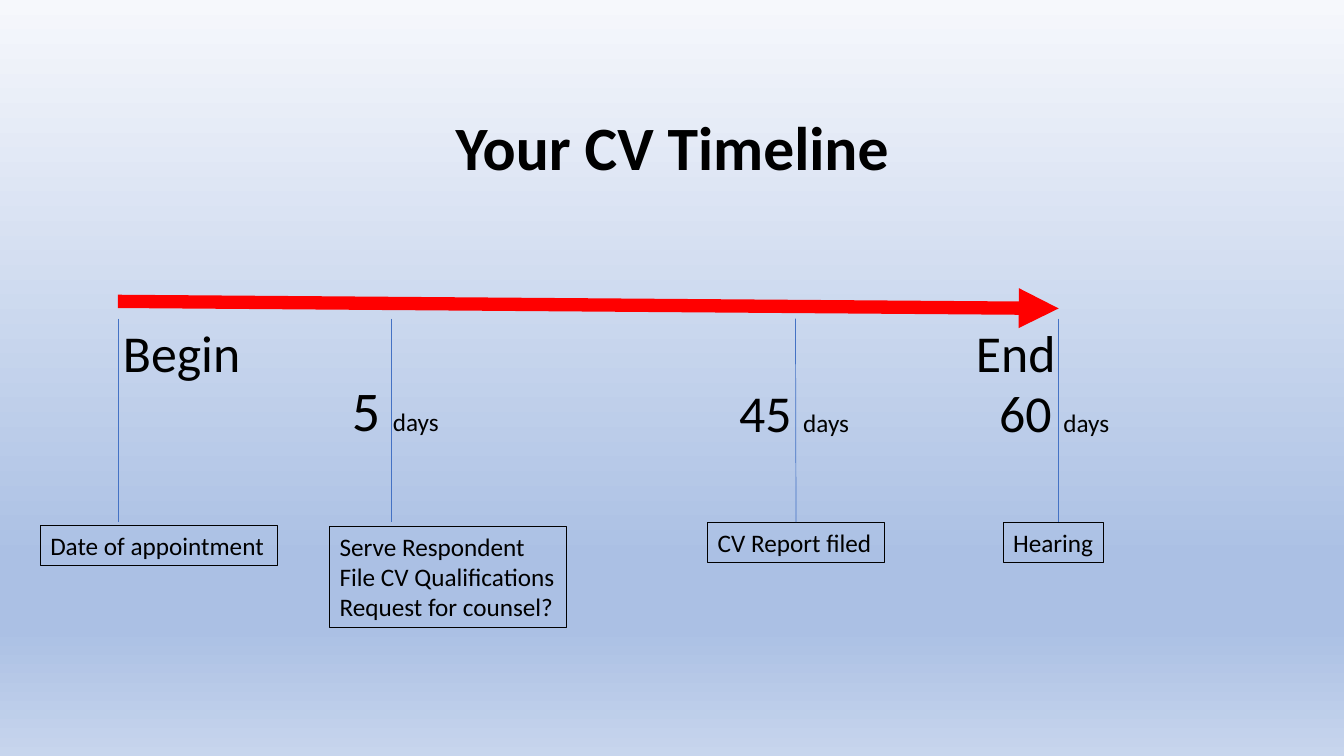
from lxml.etree import SubElement
from pptx import Presentation
from pptx.dml.color import RGBColor
from pptx.enum.shapes import MSO_CONNECTOR, MSO_SHAPE
from pptx.enum.text import MSO_ANCHOR, MSO_AUTO_SIZE, PP_ALIGN
from pptx.oxml import parse_xml
from pptx.oxml.ns import nsdecls, qn
from pptx.util import Inches, Pt

BLACK = RGBColor(0x00, 0x00, 0x00)
RED = RGBColor(0xFF, 0x00, 0x00)
BLUE = RGBColor(0x44, 0x72, 0xC4)
SKY_STOPS = [
    (0, RGBColor(0xF6, 0xF8, 0xFC)),
    (74, RGBColor(0xAB, 0xC0, 0xE4)),
    (83, RGBColor(0xAB, 0xC0, 0xE4)),
    (100, RGBColor(0xC7, 0xD5, 0xED)),
]

presentation = Presentation()
presentation.slide_width = Inches(13.33)
presentation.slide_height = Inches(7.5)
slide = presentation.slides.add_slide(presentation.slide_layouts[6])

background = slide.background.fill
background.gradient()
background.gradient_angle = 270
stop_list = slide.background._cSld.find(".//" + qn("a:gsLst"))
for stop in list(stop_list):
    stop_list.remove(stop)
for position, color in SKY_STOPS:
    stop_list.append(parse_xml(
        f'<a:gs {nsdecls("a")} pos="{position * 1000}">'
        f'<a:srgbClr val="{color}"/></a:gs>'))


def add_text(lines, left, top, width, height, bold=False, align=PP_ALIGN.LEFT,
             anchor=MSO_ANCHOR.BOTTOM, margin=0, outlined=False):
    shape = slide.shapes.add_shape(
        MSO_SHAPE.RECTANGLE, Inches(left), Inches(top), Inches(width), Inches(height))
    shape.shadow.inherit = False
    shape.fill.background()
    if outlined:
        shape.line.color.rgb = BLACK
        shape.line.width = Pt(0.75)
    else:
        shape.line.fill.background()
    frame = shape.text_frame
    frame.word_wrap = False
    if outlined:
        frame.auto_size = MSO_AUTO_SIZE.SHAPE_TO_FIT_TEXT
    frame.vertical_anchor = anchor
    frame.margin_left = frame.margin_right = Inches(margin)
    frame.margin_top = frame.margin_bottom = Inches(margin / 2)
    for index, runs in enumerate(lines):
        paragraph = frame.add_paragraph() if index else frame.paragraphs[0]
        paragraph.alignment = align
        for text, size in runs:
            run = paragraph.add_run()
            run.text = text
            run.font.name = "Calibri"
            run.font.size = Pt(size)
            run.font.bold = bold
            run.font.color.rgb = BLACK
    return shape


def add_line(start, end, color, width):
    line = slide.shapes.add_connector(
        MSO_CONNECTOR.STRAIGHT, *[Inches(value) for value in start + end])
    line.line.color.rgb = color
    line.line.width = Pt(width)
    SubElement(line._element.spPr, qn("a:effectLst"))
    return line


add_text([[("Your CV Timeline", 44)]], 0.92, 0.72, 11.5, 1.45,
         bold=True, align=PP_ALIGN.CENTER, anchor=MSO_ANCHOR.MIDDLE)

timeline = add_line((1.17, 2.99), (10.5, 3.06), RED, 9.5)
SubElement(timeline.line._get_or_add_ln(), qn("a:tailEnd"), type="triangle")

for label, left, width in [("Begin", 1.22, 1.3), ("End", 9.68, 0.8)]:
    add_text([[(label, 37)]], left, 3.15, width, 0.65)

for number, size, left, width in [("5", 40, 3.49, 0.9), ("45", 37, 7.33, 1.12),
                                  ("60", 37, 9.91, 1.12)]:
    add_text([[(number + " ", size), ("days", 18)]], left, 3.74, width, 0.65)

milestones = [
    (1.17, ["Date of appointment"], 0.4, 5.21, 2.35, 0.4),
    (3.88, ["Serve Respondent", "File CV Qualifications", "Request for counsel?"],
     3.27, 5.22, 2.35, 1.01),
    (7.89, ["CV Report filed"], 7.02, 5.18, 1.75, 0.4),
    (10.5, ["Hearing"], 9.95, 5.18, 1, 0.4),
]
for marker, lines, left, top, width, height in milestones:
    box = add_text([[(text, 18)] for text in lines], left, top, width, height,
                   anchor=MSO_ANCHOR.TOP, margin=0.1, outlined=True)
    marker_line = add_line((marker, 3.16), (marker, 5.18), BLUE, 0.5)
    if abs(left + width / 2 - marker) < 0.02:
        marker_line.end_connect(box, 0)

presentation.save("out.pptx")
